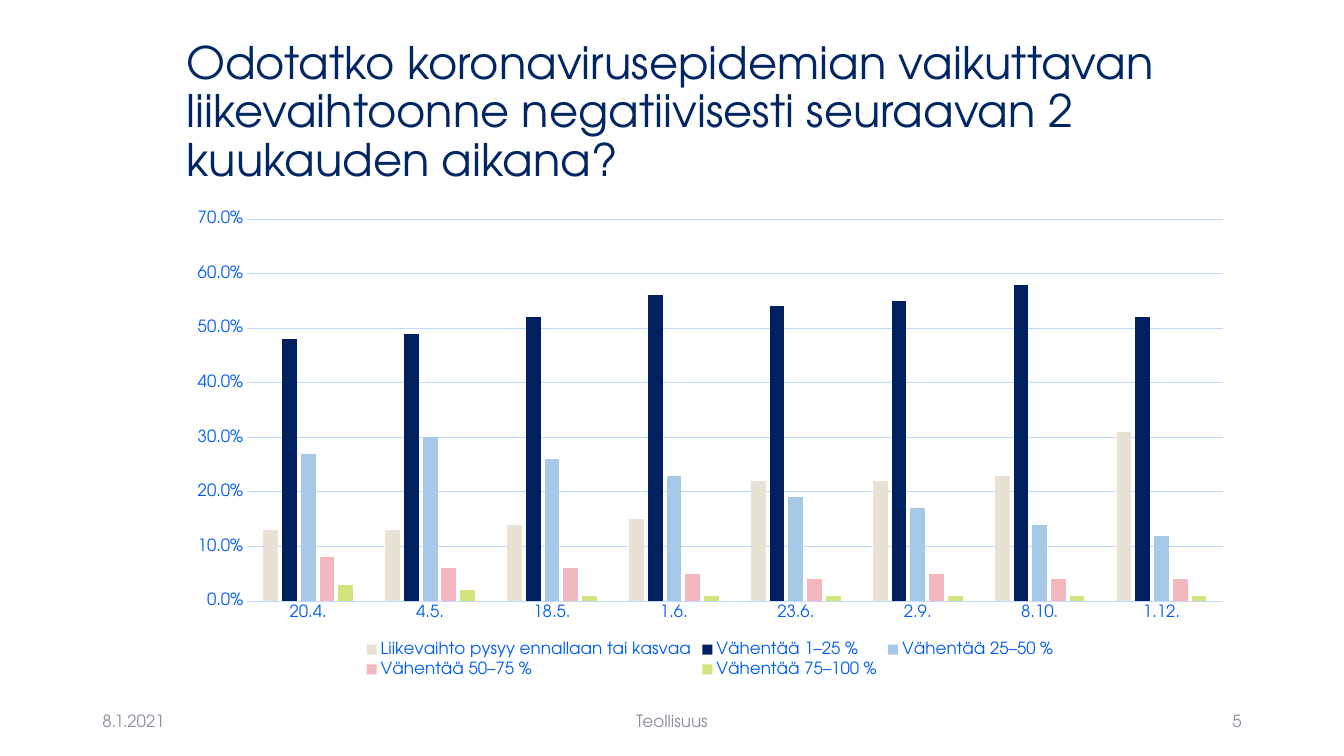
"""Build a slide on the expected effect of the coronavirus epidemic on turnover."""
from pptx import Presentation
from pptx.chart.data import CategoryChartData
from pptx.dml.color import RGBColor
from pptx.enum.chart import XL_CHART_TYPE, XL_LEGEND_POSITION, XL_TICK_MARK
from pptx.enum.text import MSO_ANCHOR, PP_ALIGN
from pptx.util import Pt

COLUMNS = XL_CHART_TYPE.COLUMN_CLUSTERED
BOTTOM = XL_LEGEND_POSITION.BOTTOM
NO_TICK = XL_TICK_MARK.NONE
MIDDLE = MSO_ANCHOR.MIDDLE
LEFT, CENTER, RIGHT = PP_ALIGN.LEFT, PP_ALIGN.CENTER, PP_ALIGN.RIGHT

THEME = {
    "font": "TeX Gyre Adventor",
    "title": {"size": 32, "color": "002663"},
    "footer": {"size": 12, "color": "8C8E9F"},
    "chart": {"size": 10, "color": "002663"},
    "label": {"size": 12, "color": "005DF3"},
    "grid": "C1D9FF",
    "grid_width": 0.75,
}


def style_font(font, role):
    values = {"name": THEME["font"], "size": Pt(THEME[role]["size"]), "bold": False}
    for name, value in values.items():
        setattr(font, name, value)
    font.color.rgb = RGBColor.from_string(THEME[role]["color"])


def style_line(line):
    line.width = Pt(THEME["grid_width"])
    line.color.rgb = RGBColor.from_string(THEME["grid"])


prs = Presentation()
prs.slide_width, prs.slide_height = Pt(960), Pt(540)
s = prs.slides.add_slide(prs.slide_layouts[6])

TITLE = ("Odotatko koronavirusepidemian vaikuttavan liikevaihtoonne "
         "negatiivisesti seuraavan 2 kuukauden aikana?")
TEXTS = [
    (TITLE, "title", LEFT, 0.9, (126, 28.8, 762.5, 104.4)),
    ("8.1.2021", "footer", LEFT, 1.0, (66, 500.4, 216, 28.8)),
    ("Teollisuus", "footer", CENTER, 1.0, (318, 500.4, 324, 28.8)),
    ("5", "footer", RIGHT, 1.0, (678, 500.4, 216, 28.8)),
]
for text, role, align, spacing, box in TEXTS:
    tf = s.shapes.add_textbox(*map(Pt, box)).text_frame
    tf.word_wrap = True
    tf.vertical_anchor = MIDDLE
    p = tf.paragraphs[0]
    p.alignment = align
    p.line_spacing = spacing
    r = p.add_run()
    r.text = text
    style_font(r.font, role)

DATES = ["20.4.", "4.5.", "18.5.", "1.6.", "23.6.", "2.9.", "8.10.", "1.12."]
SERIES = [
    ("Liikevaihto pysyy ennallaan tai kasvaa", "E8E2D5",
     [0.13, 0.13, 0.14, 0.15, 0.22, 0.22, 0.23, 0.31]),
    ("Vähentää 1–25 %", "002060",
     [0.48, 0.49, 0.52, 0.56, 0.54, 0.55, 0.58, 0.52]),
    ("Vähentää 25–50 %", "A5C9E7",
     [0.27, 0.3, 0.26, 0.23, 0.19, 0.17, 0.14, 0.12]),
    ("Vähentää 50–75 %", "F2B7BF",
     [0.08, 0.06, 0.06, 0.05, 0.04, 0.05, 0.04, 0.04]),
    ("Vähentää 75–100 %", "D1E57C",
     [0.03, 0.02, 0.01, 0.01, 0.01, 0.01, 0.01, 0.01]),
]
data = CategoryChartData(number_format="0.0%")
data.categories = DATES
for name, color, values in SERIES:
    data.add_series(name, values)

chart_box = map(Pt, (126, 144, 762.5, 342.7))
chart = s.shapes.add_chart(COLUMNS, *chart_box, data).chart
chart.has_title = False
style_font(chart.font, "chart")

plot = chart.plots[0]
for name, value in {"gap_width": 219, "overlap": -27, "vary_by_categories": False}.items():
    setattr(plot, name, value)
for series, (name, color, values) in zip(plot.series, SERIES):
    series.format.fill.solid()
    series.format.fill.fore_color.rgb = RGBColor.from_string(color)

dates, shares = chart.category_axis, chart.value_axis
for axis in (dates, shares):
    axis.major_tick_mark = axis.minor_tick_mark = NO_TICK
    style_font(axis.tick_labels.font, "label")
style_line(dates.format.line)
shares.format.line.fill.background()
for name, value in {"minimum_scale": 0, "maximum_scale": 0.7, "major_unit": 0.1}.items():
    setattr(shares, name, value)
style_line(shares.major_gridlines.format.line)
shares.tick_labels.number_format = "0.0%"
shares.tick_labels.number_format_is_linked = False

chart.has_legend = True
chart.legend.position = BOTTOM
chart.legend.include_in_layout = False
style_font(chart.legend.font, "label")

prs.save("out.pptx")
